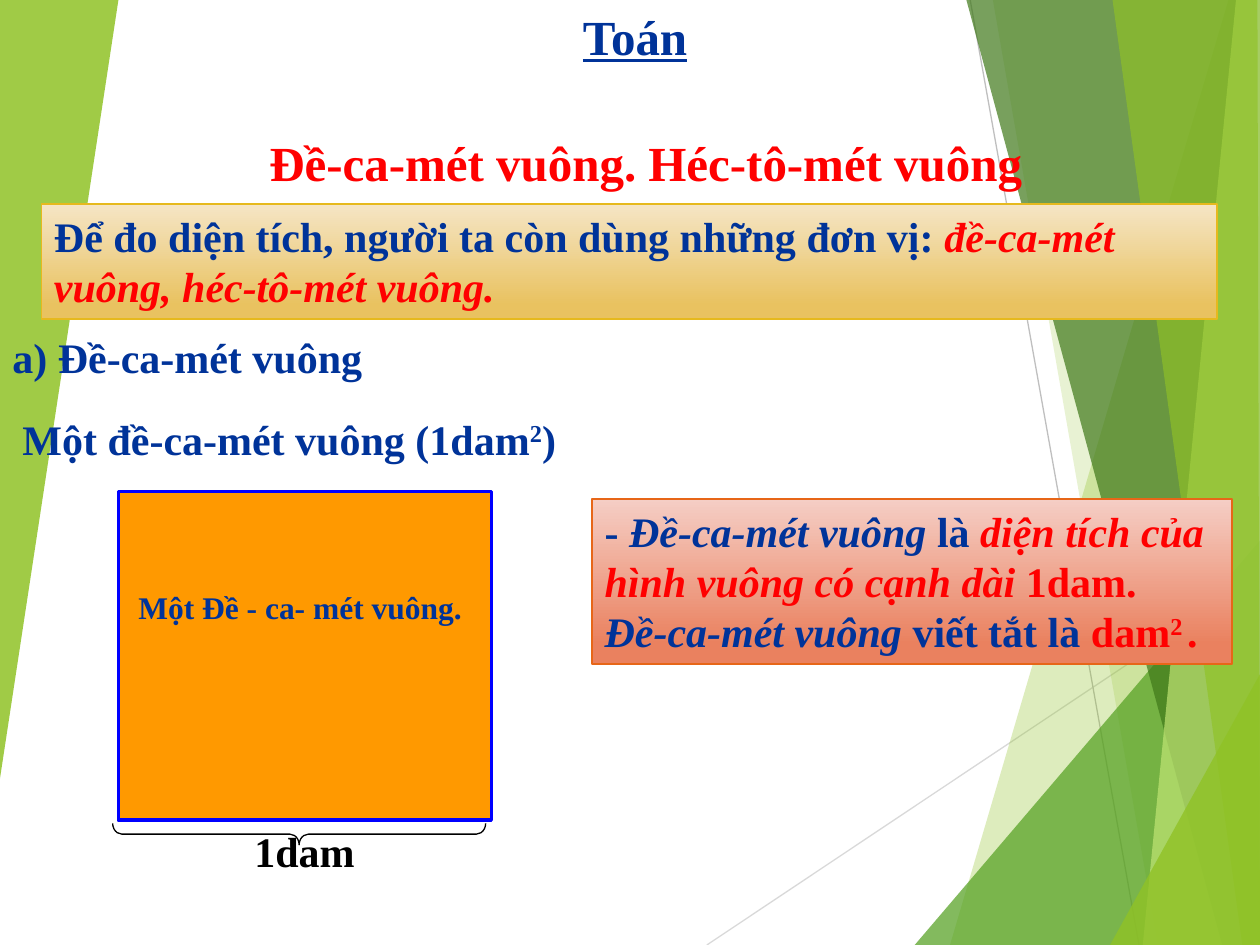
from lxml import etree
from pptx import Presentation
from pptx import util as u
from pptx.dml.color import RGBColor
from pptx.enum import shapes, text
from pptx.oxml.ns import qn

COLORS = {name: RGBColor.from_string(value) for name, value in {
    "blue": "003399", "red": "FF0000", "black": "000000",
    "orange": "FF9900", "outline": "0000FF",
    "lime": "90C226", "green": "54A021", "forest": "3F7819", "pale": "C0E474",
    "silver": "D9D9D9", "gray": "BFBFBF",
    "cream": "F5E5C5", "gold": "E9C260", "gold line": "E6B91E",
    "blush": "F5CEC5", "coral": "EA815F", "coral line": "E76618",
}.items()}

presentation = Presentation()
presentation.slide_width, presentation.slide_height = u.Inches(10), u.Inches(7.5)
slide = presentation.slides.add_slide(presentation.slide_layouts[6])
COLUMN = presentation.slide_width / 10
ROW = presentation.slide_height / 7.5


def grid(*lengths):
    """Turn alternating columns and rows into slide lengths."""
    return [u.Emu(round(length * (ROW if i % 2 else COLUMN)))
            for i, length in enumerate(lengths)]


def write(shape, paragraphs, size=24):
    """Fill a shape with paragraphs of (text, colour, styles) runs."""
    frame = shape.text_frame
    frame.word_wrap = True
    frame.auto_size = text.MSO_AUTO_SIZE.SHAPE_TO_FIT_TEXT
    frame.vertical_anchor = text.MSO_ANCHOR.TOP
    for i, runs in enumerate(paragraphs):
        paragraph = frame.add_paragraph() if i else frame.paragraphs[0]
        paragraph.alignment = text.PP_ALIGN.LEFT
        paragraph.font.name = "Times New Roman"
        paragraph.font.size = u.Pt(size)
        paragraph.font.bold = True
        for words, color, *styles in runs:
            run = paragraph.add_run()
            run.text = words
            run.font.color.rgb = COLORS[color]
            if "italic" in styles:
                run.font.italic = True
            if "underline" in styles:
                run.font.underline = True
            if "super" in styles:
                run.font._element.set("baseline", "30000")


# Background lines and translucent facets
for start, end, color in [((5.61, 7.5), (10, 4.57), "silver"),
                          ((7.7, 0), (9.04, 7.5), "gray")]:
    line = slide.shapes.add_connector(shapes.MSO_CONNECTOR.STRAIGHT, *grid(*start, *end))
    line.line.color.rgb = COLORS[color]
    line.line.width = u.Pt(0.75)
    etree.SubElement(line._element.spPr, qn("a:effectLst"))

facets = [
    ("lime", 30, [(9.75, 0), (7.54, 7.5), (10, 7.5), (10, 0)]),
    ("lime", 20, [(7.88, 0), (9.19, 7.5), (10, 7.5), (10, 0)]),
    ("green", 72, [(7.26, 7.5), (10, 4.29), (10, 7.5)]),
    ("forest", 70, [(7.67, 0), (9.7, 7.5), (10, 7.5), (10, 0)]),
    ("pale", 70, [(9.81, 0), (9.07, 7.5), (10, 7.5), (10, 0)]),
    ("lime", 65, [(8.83, 0), (9.86, 7.5), (10, 7.5), (9.98, 0)]),
    ("lime", 80, [(8.81, 7.5), (10, 5.35), (10, 7.5)]),
    ("lime", 85, [(0, 0), (0.94, 0), (0, 6.18)]),
]
for color, opacity, corners in facets:
    points = [grid(*corner) for corner in corners]
    builder = slide.shapes.build_freeform(*points[0])
    builder.add_line_segments(points[1:], close=True)
    facet = builder.convert_to_shape()
    facet.shadow.inherit = False
    facet.fill.solid()
    facet.fill.fore_color.rgb = COLORS[color]
    facet.line.fill.background()
    color_element = facet._element.spPr.find(qn("a:solidFill"))[0]
    etree.SubElement(color_element, qn("a:alpha")).set("val", str(opacity * 1000))

# Square of one square decametre, with a brace under its side
square = slide.shapes.add_shape(shapes.MSO_SHAPE.RECTANGLE, *grid(0.94, 3.9, 2.96, 2.61))
square.shadow.inherit = False
square.fill.solid()
square.fill.fore_color.rgb = COLORS["orange"]
square.line.color.rgb = COLORS["outline"]
square.line.width = u.Pt(2)

brace = slide.shapes.add_shape(shapes.MSO_SHAPE.LEFT_BRACE, *grid(2.29, 5.14, 0.17, 2.96))
brace.rotation = 270
brace.adjustments[0] = 0.43
brace.adjustments[1] = 0.5
brace.shadow.inherit = False
brace.fill.background()
brace.line.color.rgb = COLORS["black"]
brace.line.width = u.Pt(0.75)

# Headings and labels
labels = [
    ((1.75, 0, 6.58, 0.57), 28, [("Toán", "blue", "underline")]),
    ((1, 1, 8.25, 0.57), 28, [("Đề-ca-mét vuông. Héc-tô-mét vuông", "red")]),
    ((0, 2.58, 4, 0.51), 24, [("a) Đề-ca-mét vuông", "blue")]),
    ((0.08, 3.17, 4.58, 1.04), 24, [("Một đề-ca-mét vuông (1dam", "blue"),
                                    ("2", "blue", "super"), (")", "blue")]),
    ((1.92, 6.5, 1.08, 0.51), 24, [("1dam", "black")]),
    ((1, 4.62, 2.92, 0.4), 18, [("Một Đề - ca- mét vuông.", "blue")]),
]
boxes = []
for place, size, runs in labels:
    box = slide.shapes.add_textbox(*grid(*place))
    write(box, [runs], size)
    boxes.append(box)
title, subtitle, _, unit, *_ = boxes
for heading in (title, subtitle):
    heading.text_frame.paragraphs[0].alignment = text.PP_ALIGN.CENTER
unit.text_frame.paragraphs[0].line_spacing = 1.15
unit.text_frame.paragraphs[0].space_after = u.Pt(10)

# Gradient panels
panels = [
    ((4.7, 3.96, 5.08, 1.31), ("blush", "coral"), "coral line", [
        [("- ", "blue"), ("Đề-ca-mét vuông ", "blue", "italic"), ("là ", "blue"),
         ("diện tích của hình vuông có cạnh dài ", "red", "italic"), ("1dam.", "red")],
        [("Đề-ca-mét vuông ", "blue", "italic"), ("viết tắt là ", "blue"),
         ("dam", "red"), ("2 ", "red", "super"), (".", "red", "italic")]]),
    ((0.33, 1.62, 9.33, 0.91), ("cream", "gold"), "gold line", [
        [("Để đo diện tích, người ta còn dùng những đơn vị: ", "blue"),
         ("đề-ca-mét vuông, héc-tô-mét vuông.", "red", "italic")]]),
]
for place, shades, outline, paragraphs in panels:
    panel = slide.shapes.add_shape(shapes.MSO_SHAPE.RECTANGLE, *grid(*place))
    panel.shadow.inherit = False
    panel.fill.gradient()
    panel.fill.gradient_angle = 270
    for stop, position, shade in zip(panel.fill.gradient_stops, (0, 0.88), shades):
        stop.position = position
        stop.color.rgb = COLORS[shade]
    panel.line.color.rgb = COLORS[outline]
    panel.line.width = u.Pt(1)
    write(panel, paragraphs)

presentation.save("out.pptx")
